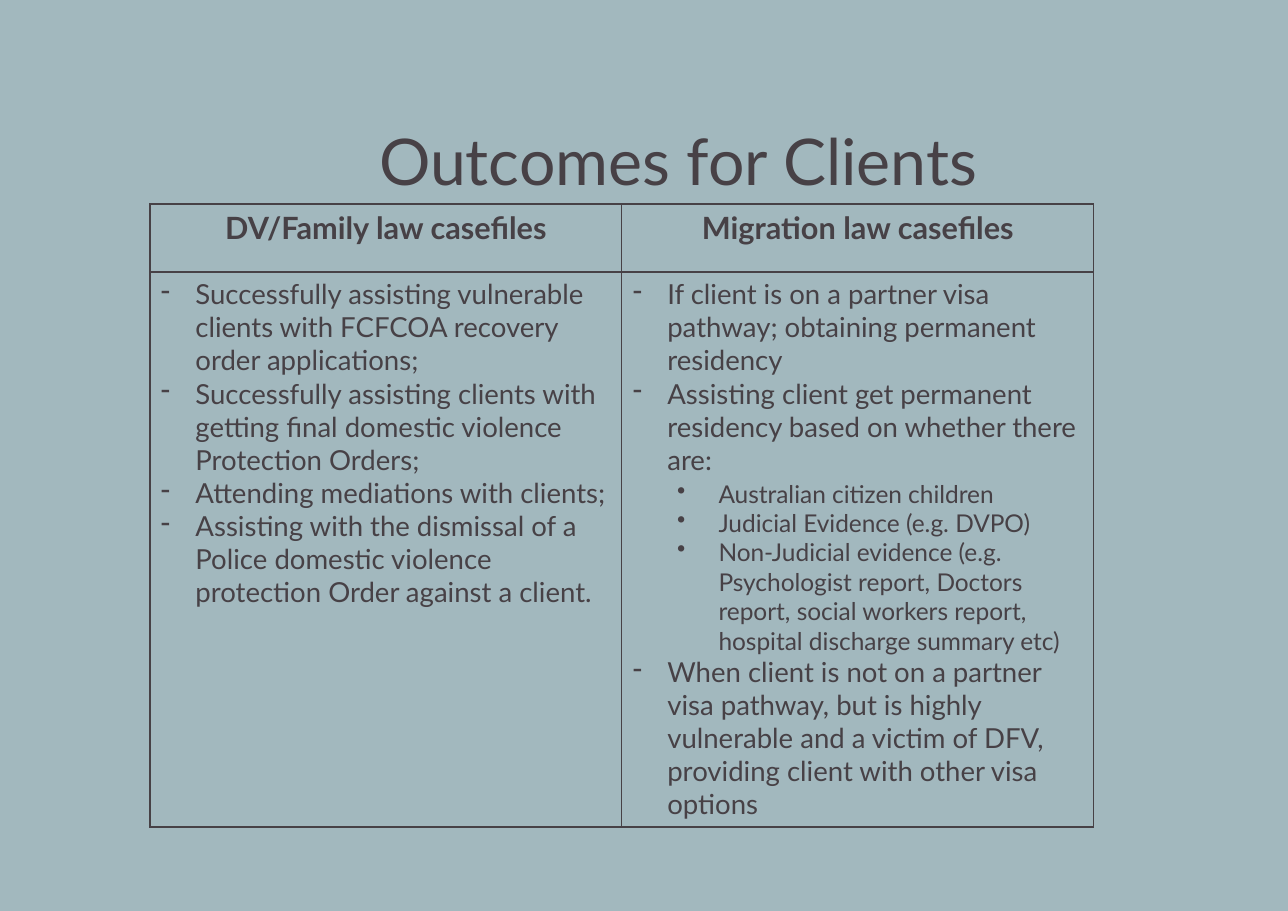
import pptx
import pptx.util
import pptx.dml.color
import pptx.enum.text
import pptx.oxml
import pptx.oxml.ns
from lxml import etree

Pt = pptx.util.Pt
ALIGN = pptx.enum.text.PP_ALIGN
ANCHOR = pptx.enum.text.MSO_ANCHOR

COLORS = {"background": "A2B8BE", "ink": "474146"}
TITLE = {"name": "Lato", "size": Pt(42)}
HEADING = {"name": "Lato", "size": Pt(20), "bold": True}
BODY = {"name": "Lato", "size": Pt(18), "bold": False}
DETAIL = {"name": "Lato", "size": Pt(16)}

HEADINGS = ["DV/Family law casefiles", "Migration law casefiles"]
FAMILY_OUTCOMES = [
    "Successfully assisting vulnerable clients with FCFCOA recovery order applications;",
    "Successfully assisting clients with getting final domestic violence Protection Orders;",
    "Attending mediations with clients;",
    "Assisting with the dismissal of a Police domestic violence protection Order against a client.",
]
MIGRATION_OUTCOMES = [
    "If client is on a partner visa pathway; obtaining permanent residency",
    "Assisting client get permanent residency based on whether there are:",
    "When client is not on a partner visa pathway, but is highly vulnerable and a victim of DFV, "
    "providing client with other visa options",
]
RESIDENCY_GROUNDS = [
    "Australian citizen children",
    "Judicial Evidence (e.g. DVPO)",
    "Non-Judicial evidence (e.g. Psychologist report, Doctors report, social workers report, "
    "hospital discharge summary etc)",
]


def color(key):
    return pptx.dml.color.RGBColor.from_string(COLORS[key])


def write(frame, lines, text_format, align=ALIGN.LEFT, bullet=None, indent=0):
    """Fill a text frame with one paragraph per line, bulleted if asked."""
    frame.word_wrap = True
    for number, line in enumerate(lines):
        paragraph = frame.add_paragraph() if number else frame.paragraphs[0]
        paragraph.alignment = align
        if bullet:
            properties = paragraph._p.get_or_add_pPr()
            properties.set("marL", str(Pt(indent)))
            properties.set("indent", str(-Pt(indent)))
            etree.SubElement(properties, pptx.oxml.ns.qn("a:buChar")).set("char", bullet)
        run = paragraph.add_run()
        run.text = line
        for attribute, value in text_format.items():
            setattr(run.font, attribute, value)
        run.font.color.rgb = color("ink")


def add_text_box(slide, box, margin, anchor):
    frame = slide.shapes.add_textbox(*map(Pt, box)).text_frame
    for side in ("left", "top", "right", "bottom"):
        setattr(frame, f"margin_{side}", Pt(margin))
    frame.vertical_anchor = anchor
    return frame


def add_title(slide, box):
    frame = add_text_box(slide, box, 4.3, ANCHOR.BOTTOM)
    write(frame, ["Outcomes for Clients"], TITLE, ALIGN.CENTER)


def border_cell(cell):
    """Leave the cell unfilled and outline its four sides."""
    cell.fill.background()
    for position, side in enumerate(("lnL", "lnR", "lnT", "lnB")):
        line = pptx.oxml.parse_xml(
            f'<a:{side} {pptx.oxml.ns.nsdecls("a")} w="{Pt(1)}"><a:solidFill>'
            f'<a:srgbClr val="{COLORS["ink"]}"/></a:solidFill></a:{side}>')
        cell._tc.get_or_add_tcPr().insert(position, line)


def add_outcomes(slide, box):
    left, top, width, height = box
    heading_height = 44.4
    table = slide.shapes.add_table(2, 2, *map(Pt, box)).table
    table.first_row = table.horz_banding = False
    table.rows[0].height = Pt(heading_height)
    table.rows[1].height = Pt(height - heading_height)
    for column, outcomes in enumerate((FAMILY_OUTCOMES, MIGRATION_OUTCOMES)):
        heading, body = table.cell(0, column), table.cell(1, column)
        write(heading.text_frame, [HEADINGS[column]], HEADING, ALIGN.CENTER)
        write(body.text_frame, outcomes, BODY, bullet="-", indent=22.5)
        border_cell(heading)
        border_cell(body)

    # The residency grounds sit in the gap above the last migration outcome.
    body.text_frame.paragraphs[-1].space_before = Pt(117)
    grounds_box = (left + width / 2 + 32.5, top + 175.7, 262, 124)
    grounds = add_text_box(slide, grounds_box, 3.6, ANCHOR.TOP)
    write(grounds, RESIDENCY_GROUNDS, DETAIL, bullet="•", indent=27)


def main():
    deck = pptx.Presentation()
    deck.slide_width, deck.slide_height = Pt(841), Pt(594.7)
    slide = deck.slides.add_slide(deck.slide_layouts[6])
    slide.background.fill.solid()
    slide.background.fill.fore_color.rgb = color("background")
    add_title(slide, (85, 70, 715.7, 64))
    add_outcomes(slide, (97.9, 133.2, 616.3, 406.7))
    deck.save("out.pptx")


if __name__ == "__main__":
    main()
